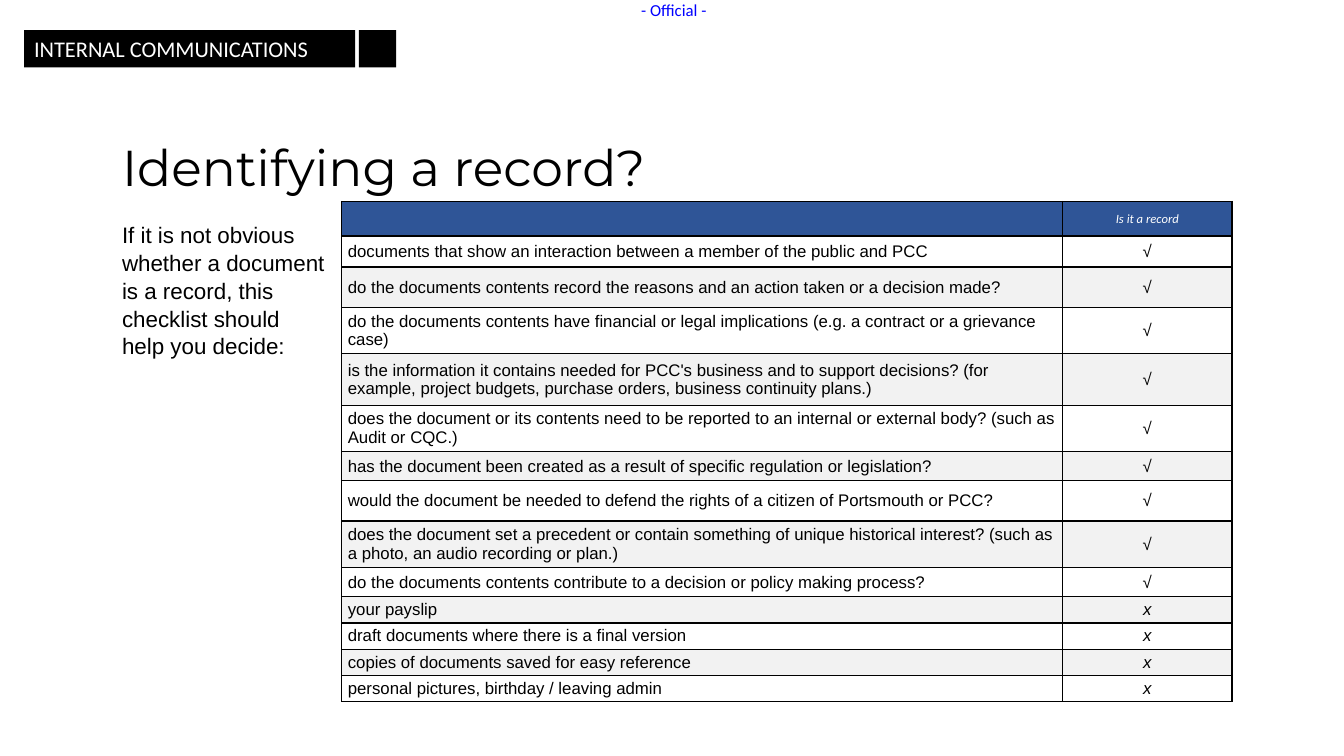
from lxml import etree
from pptx import Presentation
from pptx.dml.color import RGBColor
from pptx.enum.shapes import MSO_SHAPE
from pptx.enum.text import MSO_ANCHOR, MSO_AUTO_SIZE, PP_ALIGN
from pptx.oxml.ns import qn
from pptx.util import Inches, Pt

RECTANGLE = MSO_SHAPE.RECTANGLE
TOP, MIDDLE = MSO_ANCHOR.TOP, MSO_ANCHOR.MIDDLE
LEFT, CENTER = PP_ALIGN.LEFT, PP_ALIGN.CENTER
NO_FIT = MSO_AUTO_SIZE.NONE

COLORS = {"black": "000000", "white": "FFFFFF", "official": "0000FF",
          "header": "2F5597", "band": "F2F2F2"}
SLIDE_WIDTH, SLIDE_HEIGHT = Inches(13.33), Inches(7.5)

BANNER_FONT = {"name": "Calibri", "size": Pt(16)}
OFFICIAL_FONT = {"name": "Calibri", "size": Pt(12)}
TITLE_FONT = {"name": "Montserrat", "size": Pt(36)}
INTRO_FONT = {"name": "Arial", "size": Pt(16)}
HEADER_FONT = {"name": "Calibri", "size": Pt(9), "bold": False, "italic": True}
QUESTION_FONT = {"name": "Arial", "size": Pt(12), "bold": False, "italic": False}
ANSWER_FONT = {**QUESTION_FONT, "italic": True}

INTRO = ["If it is not obvious", "whether a document", "is a record, this",
         "checklist should", "help you decide:"]
HEADER_HEIGHT = 0.34
CHECKLIST = [
    ("documents that show an interaction between a member of the public and PCC", "√", 0.31),
    ("do the documents contents record the reasons and an action taken or a decision made?", "√", 0.4),
    ("do the documents contents have financial or legal implications "
     "(e.g. a contract or a grievance case)", "√", 0.44),
    ("is the information it contains needed for PCC's business and to support decisions? "
     "(for example, project budgets, purchase orders, business continuity plans.)", "√", 0.51),
    ("does the document or its contents need to be reported to an internal or external body? "
     "(such as Audit or CQC.)", "√", 0.46),
    ("has the document been created as a result of specific regulation or legislation?", "√", 0.29),
    ("would the document be needed to defend the rights of a citizen of Portsmouth or PCC?", "√", 0.4),
    ("does the document set a precedent or contain something of unique historical interest? "
     "(such as a photo, an audio recording or plan.)", "√", 0.44),
    ("do the documents contents contribute to a decision or policy making process?", "√", 0.29),
    ("your payslip", "x", 0.25),
    ("draft documents where there is a final version", "x", 0.25),
    ("copies of documents saved for easy reference", "x", 0.25),
    ("personal pictures, birthday / leaving admin", "x", 0.25),
]


def region(left, top, width, height):
    """Turn percentages of the slide into a box."""
    return (int(SLIDE_WIDTH * left / 100), int(SLIDE_HEIGHT * top / 100),
            int(SLIDE_WIDTH * width / 100), int(SLIDE_HEIGHT * height / 100))


def assign(target, values):
    """Set each named attribute on the target."""
    for name, value in values.items():
        setattr(target, name, value)


def color(name):
    """Look up a palette colour."""
    return RGBColor.from_string(COLORS[name])


def format_paragraph(paragraph, font, ink, **layout):
    """Apply font, colour and paragraph layout."""
    assign(paragraph, layout)
    assign(paragraph.font, font)
    paragraph.font.color.rgb = color(ink)


def add_banner(slide, box):
    """Place the black section label and its closing square."""
    left, top, width, height = box
    label_width = int(width * 0.89)
    parts = [("INTERNAL COMMUNICATIONS", left, label_width),
             ("", left + width - height, height)]
    for wording, part_left, part_width in parts:
        bar = slide.shapes.add_shape(RECTANGLE, part_left, top, part_width, height)
        bar.shadow.inherit = False
        bar.fill.solid()
        bar.fill.fore_color.rgb = color("black")
        bar.line.fill.background()
        if wording:
            bar.text_frame.text = wording
            format_paragraph(bar.text_frame.paragraphs[0], BANNER_FONT, "white", alignment=LEFT)


def add_official_mark(slide, box):
    """Place the classification at the top edge."""
    frame = slide.shapes.add_textbox(*box).text_frame
    assign(frame, {"margin_left": 0, "margin_right": 0, "margin_top": 0,
                   "margin_bottom": 0, "word_wrap": False})
    frame.text = "- Official -"
    format_paragraph(frame.paragraphs[0], OFFICIAL_FONT, "official", alignment=CENTER)


def fill_placeholder(placeholder, box, lines, font, line_spacing):
    """Move a placeholder into its box and write plain lines in it."""
    assign(placeholder, dict(zip(("left", "top", "width", "height"), box)))
    frame = placeholder.text_frame
    assign(frame, {"auto_size": NO_FIT, "word_wrap": True, "vertical_anchor": TOP})
    frame.text = "\n".join(lines)
    for paragraph in frame.paragraphs:
        properties = paragraph._p.get_or_add_pPr()
        properties.set("marL", "0")
        properties.set("indent", "0")
        etree.SubElement(properties, qn("a:buNone"))
        format_paragraph(paragraph, font, "black", alignment=LEFT,
                         line_spacing=line_spacing, space_before=Pt(0))


def add_borders(cell):
    """Draw a thin black line on every side of a cell."""
    properties = cell._tc.get_or_add_tcPr()
    for position, side in enumerate(("lnL", "lnR", "lnT", "lnB")):
        border = etree.Element(qn(f"a:{side}"), w=str(int(Pt(1.07))))
        fill = etree.SubElement(border, qn("a:solidFill"))
        etree.SubElement(fill, qn("a:srgbClr"), val=COLORS["black"])
        properties.insert(position, border)


def fill_cell(cell, wording, font, ink, background, alignment):
    """Write and format one table cell."""
    assign(cell, {"margin_left": Inches(0.06), "margin_right": Inches(0.06),
                  "margin_top": Inches(0.03), "margin_bottom": Inches(0.03),
                  "vertical_anchor": MIDDLE})
    cell.fill.solid()
    cell.fill.fore_color.rgb = color(background)
    add_borders(cell)
    cell.text = wording
    format_paragraph(cell.text_frame.paragraphs[0], font, ink, alignment=alignment)


def add_checklist(slide, box):
    """Place the record checklist table."""
    width, height = box[2:]
    table = slide.shapes.add_table(len(CHECKLIST) + 1, 2, *box).table
    for column, share in zip(table.columns, (0.81, 0.19)):
        column.width = int(width * share)
    weights = [HEADER_HEIGHT] + [weight for _, _, weight in CHECKLIST]
    for row, weight in zip(table.rows, weights):
        row.height = int(height * weight / sum(weights))
    for column, heading in enumerate(("", "Is it a record")):
        fill_cell(table.cell(0, column), heading, HEADER_FONT, "white", "header", CENTER)
    for row, (question, answer, _) in enumerate(CHECKLIST, start=1):
        background = "white" if row % 2 else "band"
        fill_cell(table.cell(row, 0), question, QUESTION_FONT, "black", background, LEFT)
        fill_cell(table.cell(row, 1), answer, ANSWER_FONT, "black", background, CENTER)


def main():
    """Build the record checklist slide."""
    deck = Presentation()
    assign(deck, {"slide_width": SLIDE_WIDTH, "slide_height": SLIDE_HEIGHT})
    slide = deck.slides.add_slide(deck.slide_layouts[1])
    add_banner(slide, region(1.8, 4, 27.68, 4.93))
    add_official_mark(slide, region(47.55, 0, 5.18, 2.67))
    fill_placeholder(slide.shapes.title, region(8.33, 18.27, 88.73, 10.13),
                     ["Identifying a record?"], TITLE_FONT, 0.9)
    fill_placeholder(slide.placeholders[1], region(8.33, 28.4, 87.83, 61.2),
                     INTRO, INTRO_FONT, 1.04)
    add_checklist(slide, region(25.43, 26.67, 66.23, 65.07))
    deck.save("out.pptx")


if __name__ == "__main__":
    main()
